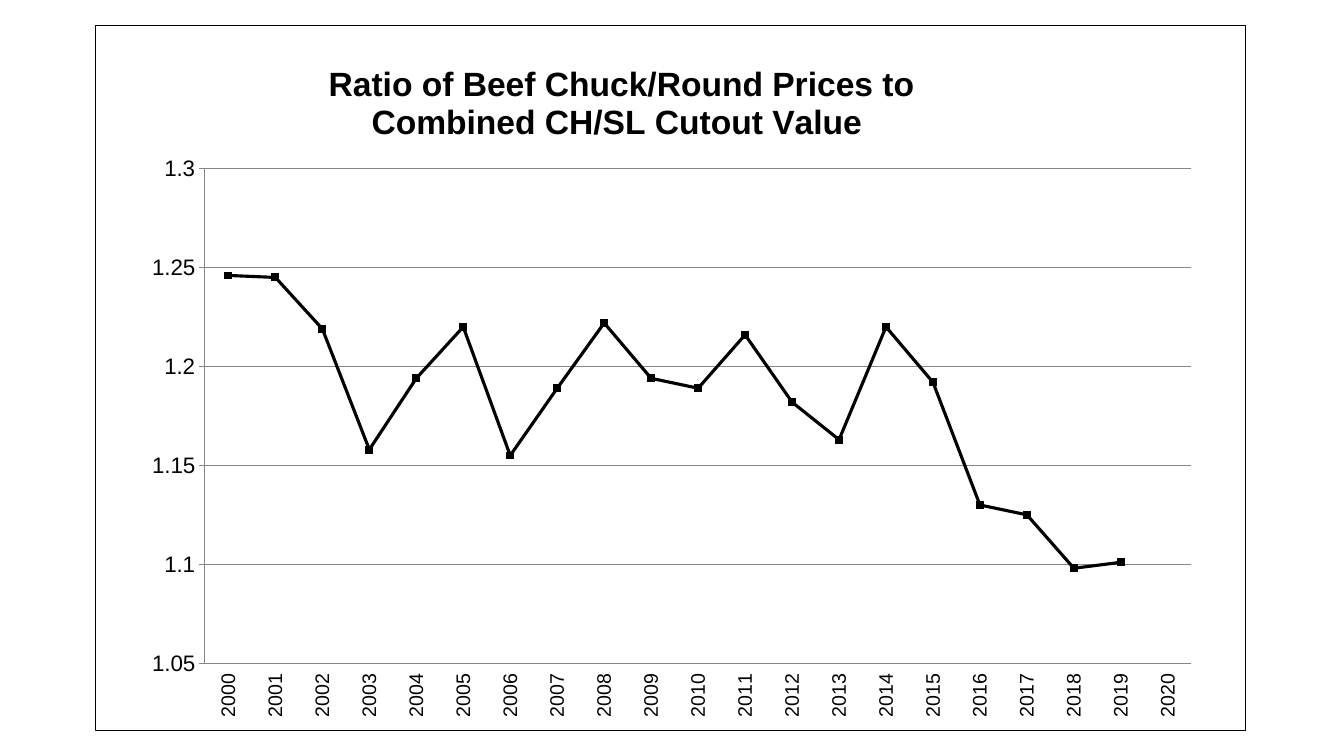
from pptx import Presentation, oxml, util as u
from pptx.chart.data import CategoryChartData
from pptx.dml.color import RGBColor
from pptx.enum import chart as ch
from pptx.oxml.ns import nsdecls, qn

TITLE = "Ratio of Beef Chuck/Round Prices to\nCombined CH/SL Cutout Value "
FIRST_YEAR = 2000
RATIOS = [1.246, 1.245, 1.219, 1.158, 1.194, 1.22, 1.155, 1.189, 1.222, 1.194, 1.189,
          1.216, 1.182, 1.163, 1.22, 1.192, 1.13, 1.125, 1.098, 1.101, None]

SLIDE_SIZE = (960, 540)
CHART_BOX = (68, 18, 822, 504)
TITLE_PLACE = {"xMode": "edge", "yMode": "edge", "x": 0.2, "y": 0.05}
PLOT_PLACE = {"layoutTarget": "inner", "xMode": "edge", "yMode": "edge",
              "x": 0.095, "y": 0.203, "w": 0.858, "h": 0.702}
THEME = {"font": "Arial", "ink": "000000", "grid": "868686", "thin": 0.75, "line": 2.25,
         "marker": 5, "title": 24, "body": 18, "ratio": 16, "year": 14}


def style_font(font, size, bold=False):
    font.name = THEME["font"]
    font.size = u.Pt(size)
    font.bold = bold
    font.color.rgb = RGBColor.from_string(THEME["ink"])


def style_line(line, color, width):
    line.color.rgb = RGBColor.from_string(THEME[color])
    line.width = u.Pt(THEME[width])


def place(element, index, settings):
    """Give a chart part a fixed layout, in fractions of the chart."""
    for old in element.findall(qn("c:layout")):
        element.remove(old)
    entries = "".join(f'<c:{key} val="{value}"/>' for key, value in settings.items())
    element.insert(index, oxml.parse_xml(
        f'<c:layout {nsdecls("c")}><c:manualLayout>{entries}</c:manualLayout></c:layout>'))


def add_border(chart):
    chart_part = chart._chartSpace.find(qn("c:chart"))
    chart_part.addnext(oxml.parse_xml(
        f'<c:spPr {nsdecls("c", "a")}><a:noFill/><a:ln w="{u.Pt(THEME["thin"])}"><a:solidFill>'
        f'<a:srgbClr val="{THEME["ink"]}"/></a:solidFill></a:ln></c:spPr>'))


def style_title(chart):
    chart.has_title = True
    title = chart.chart_title
    title.text_frame.text = TITLE
    for paragraph in title.text_frame.paragraphs:
        for run in paragraph.runs:
            style_font(run.font, THEME["title"], bold=True)
    place(title._element, 1, TITLE_PLACE)


def style_axes(chart):
    years, ratios = chart.category_axis, chart.value_axis
    years.major_tick_mark = ch.XL_TICK_MARK.NONE
    years.tick_label_position = ch.XL_TICK_LABEL_POSITION.LOW
    years.has_major_gridlines = False
    ratios.minimum_scale, ratios.maximum_scale, ratios.major_unit = 1.05, 1.3, 0.05
    ratios.major_tick_mark = ch.XL_TICK_MARK.OUTSIDE
    ratios.has_major_gridlines = True
    ratios.tick_labels.number_format = "General"
    ratios.tick_labels.number_format_is_linked = False
    style_line(ratios.major_gridlines.format.line, "grid", "thin")
    for axis, size in ((years, "year"), (ratios, "ratio")):
        style_font(axis.tick_labels.font, THEME[size])
        style_line(axis.format.line, "grid", "thin")
    label_body = years._element.find(qn("c:txPr")).find(qn("a:bodyPr"))
    label_body.set("rot", "-5400000")
    label_body.set("vert", "horz")


def style_series(chart):
    chart.plots[0].vary_by_categories = False
    ratio_line = chart.plots[0].series[0]
    ratio_line.smooth = False
    style_line(ratio_line.format.line, "ink", "line")
    marker = ratio_line.marker
    marker.style = ch.XL_MARKER_STYLE.SQUARE
    marker.size = THEME["marker"]
    marker.format.fill.solid()
    marker.format.fill.fore_color.rgb = RGBColor.from_string(THEME["ink"])
    style_line(marker.format.line, "ink", "thin")


def main():
    deck = Presentation()
    deck.slide_width, deck.slide_height = map(u.Pt, SLIDE_SIZE)
    slide = deck.slides.add_slide(deck.slide_layouts[6])
    data = CategoryChartData()
    data.categories = [str(FIRST_YEAR + i) for i in range(len(RATIOS))]
    data.add_series("Series 1", RATIOS)
    chart = slide.shapes.add_chart(
        ch.XL_CHART_TYPE.LINE_MARKERS, *map(u.Pt, CHART_BOX), data).chart
    chart.has_legend = False
    style_font(chart.font, THEME["body"])
    style_title(chart)
    style_axes(chart)
    style_series(chart)
    place(chart._chartSpace.find(qn("c:chart")).find(qn("c:plotArea")), 0, PLOT_PLACE)
    add_border(chart)
    deck.save("out.pptx")


if __name__ == "__main__":
    main()
